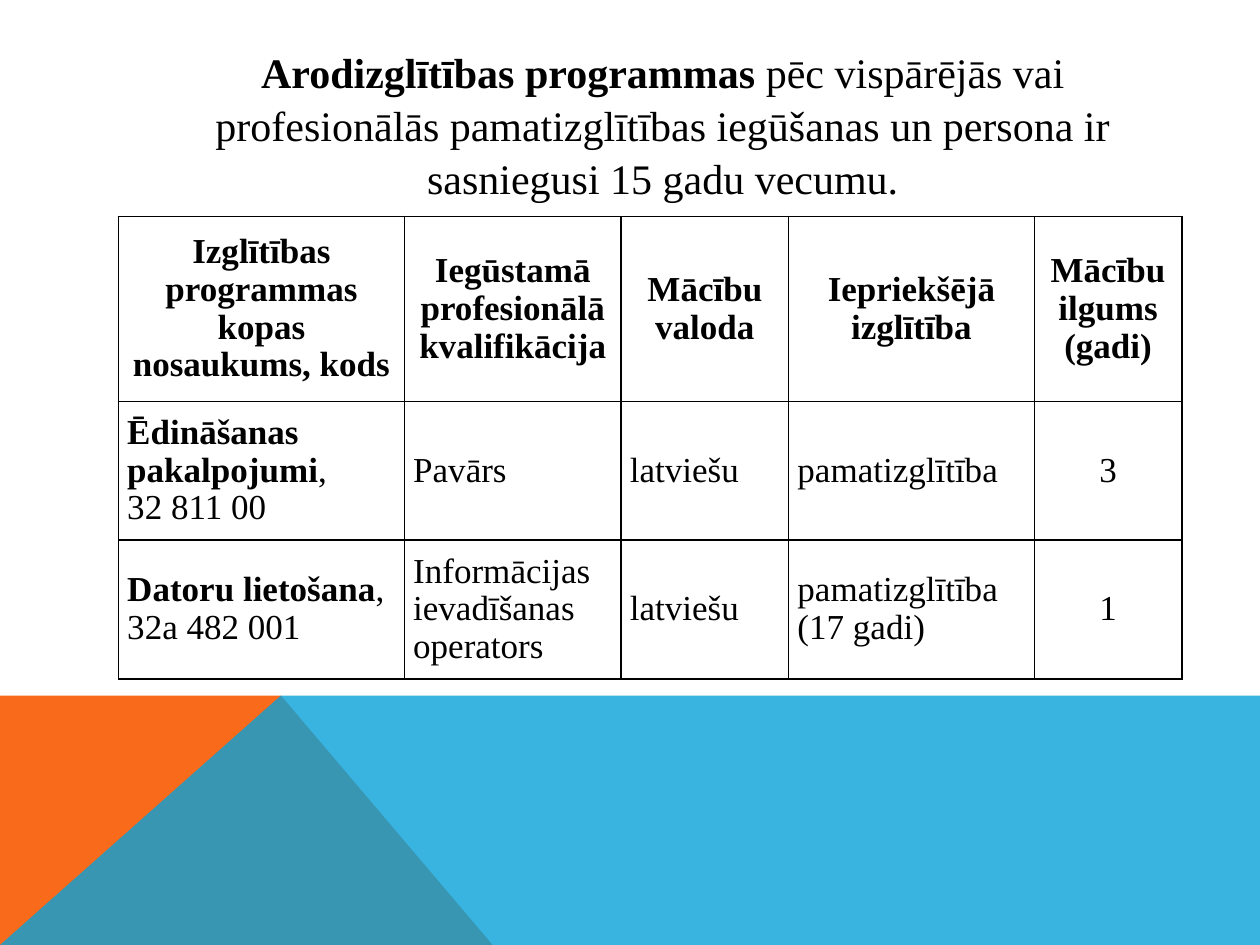
"""Build the slide on vocational programmes: a title, a table and a coloured base."""
from lxml import etree
from pptx import Presentation
from pptx import util as u
from pptx.dml.color import RGBColor
from pptx.enum import text
from pptx.oxml import ns

BLACK = RGBColor(0x00, 0x00, 0x00)
ORANGE = RGBColor(0xF9, 0x6A, 0x1B)
BLUE = RGBColor(0x08, 0xA1, 0xD9)
FONT = "Times New Roman"
COLS = [2.27, 1.72, 1.33, 1.95, 1.17]
ROWS = [1.47, 1.1, 1.1]
CENTRED_COL = len(COLS) - 1


def add_runs(p, parts, size):
    for words, bold in parts:
        r = p.add_run()
        r.text = words
        r.font.name, r.font.size, r.font.bold = FONT, u.Pt(size), bold
        r.font.color.rgb = BLACK


def add_border(tcPr, index, side):
    ln = etree.Element(ns.qn(f"a:ln{side}"), w=str(u.Pt(1)))
    fill = etree.SubElement(ln, ns.qn("a:solidFill"))
    etree.SubElement(fill, ns.qn("a:srgbClr"), val=str(BLACK))
    tcPr.insert(index, ln)


prs = Presentation()
prs.slide_width, prs.slide_height = u.Inches(10), u.Inches(7.5)
W, H = prs.slide_width, prs.slide_height
s = prs.slides.add_slide(prs.slide_layouts[5])

top, peak, foot = int(H * 0.736), int(W * 0.223), int(W * 0.391)
bands = [
    (ORANGE, 100, [(0, H), (0, top), (peak, top), (foot, H)]),
    (BLUE, 80, [(0, H), (peak, top), (W, top), (W, H)]),
]
for colour, opacity, points in bands:
    fb = s.shapes.build_freeform(*points[0])
    fb.add_line_segments(points[1:], close=True)
    sp = fb.convert_to_shape()
    sp.shadow.inherit = False
    sp.line.fill.background()
    sp.fill.solid()
    sp.fill.fore_color.rgb = colour
    if opacity < 100:
        clr = sp.fill._xPr.find(".//" + ns.qn("a:srgbClr"))
        etree.SubElement(clr, ns.qn("a:alpha"), val=str(opacity * 1000))

title = s.shapes.title
title.left, title.top = int(W * 0.09), int(H * 0.053)
title.width, title.height = int(W * 0.822), int(H * 0.155)
tf = title.text_frame
tf.word_wrap = True
tf.auto_size = text.MSO_AUTO_SIZE.NONE
tf.vertical_anchor = text.MSO_ANCHOR.MIDDLE
p = tf.paragraphs[0]
p.alignment = text.PP_ALIGN.CENTER
p.line_spacing = 1.05
pPr = p._p.get_or_add_pPr()
pPr.set("marL", str(u.Inches(0.5)))
pPr.set("indent", "0")
add_runs(p, [
    ("Arodizglītības programmas ", True),
    ("pēc vispārējās vai profesionālās pamatizglītības iegūšanas "
     "un persona ir sasniegusi 15 gadu vecumu.", False),
], 24)

headers = ["Izglītības programmas kopas nosaukums, kods",
           "Iegūstamā profesionālā kvalifikācija", "Mācību valoda",
           "Iepriekšējā izglītība", "Mācību ilgums (gadi)"]
programmes = [
    ("Ēdināšanas pakalpojumi", "32 811 00",
     ["Pavārs", "latviešu", "pamatizglītība", "3"]),
    ("Datoru lietošana", "32a 482 001",
     ["Informācijas ievadīšanas operators", "latviešu",
      "pamatizglītība (17 gadi)", "1"]),
]
rows = [[[[(h, True)]] for h in headers]]
for name, code, values in programmes:
    first = [[(name, True), (",", False)], [(code, False)]]
    rows.append([first] + [[[(v, False)]] for v in values])

table = s.shapes.add_table(len(ROWS), len(COLS), int(W * 0.094), int(H * 0.229),
                           u.Inches(sum(COLS)), u.Inches(sum(ROWS))).table
table.first_row = table.horz_banding = False
for col, width in zip(table.columns, COLS):
    col.width = u.Inches(width)
for i, (row, height) in enumerate(zip(rows, ROWS)):
    table.rows[i].height = u.Inches(height)
    for j, paragraphs in enumerate(row):
        cell = table.cell(i, j)
        cell.fill.background()
        cell.vertical_anchor = text.MSO_ANCHOR.MIDDLE
        cell.margin_left = cell.margin_right = u.Inches(0.07)
        cell.margin_top = cell.margin_bottom = 0
        for k, side in enumerate("LRTB"):
            add_border(cell._tc.get_or_add_tcPr(), k, side)
        tf = cell.text_frame
        centred = i == 0 or j == CENTRED_COL
        for k, parts in enumerate(paragraphs):
            p = tf.add_paragraph() if k else tf.paragraphs[0]
            p.alignment = text.PP_ALIGN.CENTER if centred else text.PP_ALIGN.LEFT
            p.line_spacing = 0.97
            add_runs(p, parts, 20)

prs.save("out.pptx")
